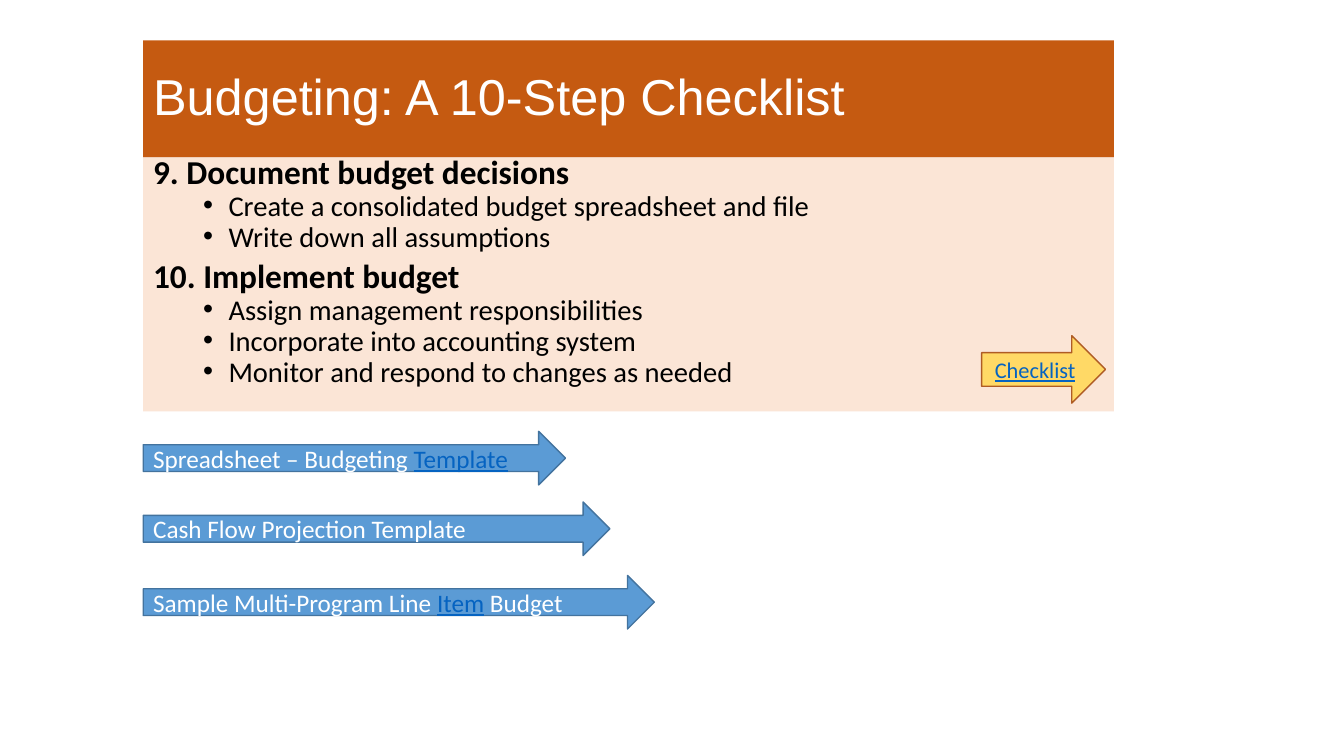
import pptx
import pptx.util
import pptx.dml.color
import pptx.enum.shapes
import pptx.enum.text
import lxml.etree

Cm, Pt = pptx.util.Cm, pptx.util.Pt
KIND = pptx.enum.shapes.MSO_SHAPE
ALIGN = pptx.enum.text.PP_ALIGN
ANCHOR = pptx.enum.text.MSO_ANCHOR

LEFT, WIDTH = 3.61, 24.46
LINK = "0563C1"
STEPS = [
    ("9. Document budget decisions", [
        "Create a consolidated budget spreadsheet and file",
        "Write down all assumptions"]),
    ("10. Implement budget", [
        "Assign management responsibilities",
        "Incorporate into accounting system",
        "Monitor and respond to changes as needed"]),
]
# Top of each arrow, then its runs as (text, is link)
FILES = [
    (10.87, [("Spreadsheet – Budgeting ", False), ("Template", True)]),
    (12.65, [("Cash Flow Projection Template", False)]),
    (14.5, [("Sample Multi-Program Line ", False), ("Item", True),
            (" Budget", False)]),
]


def tint(color, code):
    color.rgb = pptx.dml.color.RGBColor.from_string(code)


def style(para, font, size, code, bold=False):
    para.font.name = font
    para.font.size = Pt(size)
    para.font.bold = bold
    tint(para.font.color, code)


def block(slide, kind, box, fill, line=None, anchor=ANCHOR.MIDDLE):
    """Add a filled shape at box (left, top, width, height in cm)."""
    shape = slide.shapes.add_shape(kind, *map(Cm, box))
    shape.shadow.inherit = False
    shape.fill.solid()
    tint(shape.fill.fore_color, fill)
    if line:
        tint(shape.line.color, line)
        shape.line.width = Pt(1)
    else:
        shape.line.fill.background()
    shape.text_frame.word_wrap = True
    shape.text_frame.vertical_anchor = anchor
    return shape.text_frame


def bullet(para):
    props = para._p.get_or_add_pPr()
    props.set("marL", str(Cm(1.9)))
    props.set("indent", str(-Cm(0.64)))
    space = pptx.oxml.ns.qn
    font = lxml.etree.SubElement(props, space("a:buFont"))
    font.set("typeface", "Arial")
    lxml.etree.SubElement(props, space("a:buChar")).set("char", "•")


def title(slide, box):
    para = block(slide, KIND.RECTANGLE, box, "C55A11").paragraphs[0]
    para.text = "Budgeting: A 10-Step Checklist"
    para.alignment = ALIGN.LEFT
    para.line_spacing = 0.9
    style(para, "Arial", 36, "FFFFFF")


def steps(slide, box):
    frame = block(slide, KIND.RECTANGLE, box, "FBE5D6", anchor=ANCHOR.TOP)
    lines = [(text, text == head)
             for head, items in STEPS for text in [head, *items]]
    for i, (text, head) in enumerate(lines):
        para = frame.add_paragraph() if i else frame.paragraphs[0]
        para.text = text
        para.alignment = ALIGN.LEFT
        para.line_spacing = 0.7
        para.space_before = Pt(10 if head else 5)
        style(para, "Calibri", 23.8 if head else 20.4, "000000", head)
        if not head:
            para.level = 1
            bullet(para)


def arrow(slide, box, runs, size, fill, line, align):
    para = block(slide, KIND.RIGHT_ARROW, box, fill, line).paragraphs[0]
    para.alignment = align
    style(para, "Calibri", size, "FFFFFF")
    for text, link in runs:
        run = para.add_run()
        run.text = text
        if link:
            run.font.underline = True
            tint(run.font.color, LINK)


def build(slide):
    title(slide, (LEFT, 1.02, WIDTH, 2.95))
    steps(slide, (LEFT, 3.97, WIDTH, 6.4))
    arrow(slide, (LEFT + WIDTH - 3.33, 8.46, 3.12, 1.7),
          [("Checklist", True)], 16, "FFD966", "AF5C24", ALIGN.CENTER)
    for i, (top, runs) in enumerate(FILES):
        arrow(slide, (LEFT, top, 10.64 + 1.12 * i, 1.35),
              runs, 18, "5B9BD5", "43739E", ALIGN.LEFT)


def main():
    deck = pptx.Presentation()
    deck.slide_width, deck.slide_height = Cm(33.87), Cm(19.05)
    build(deck.slides.add_slide(deck.slide_layouts[6]))
    deck.save("out.pptx")


if __name__ == "__main__":
    main()
